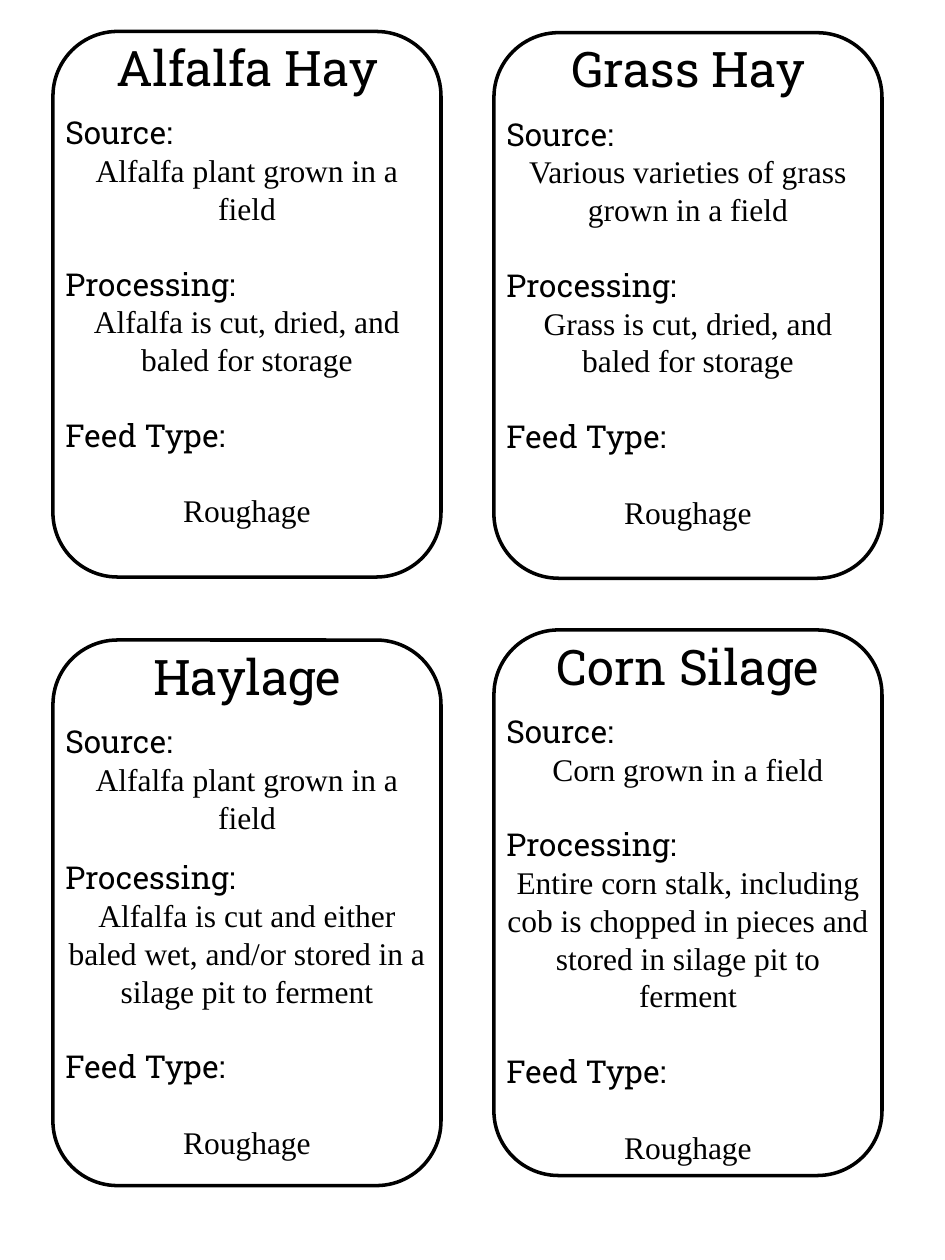
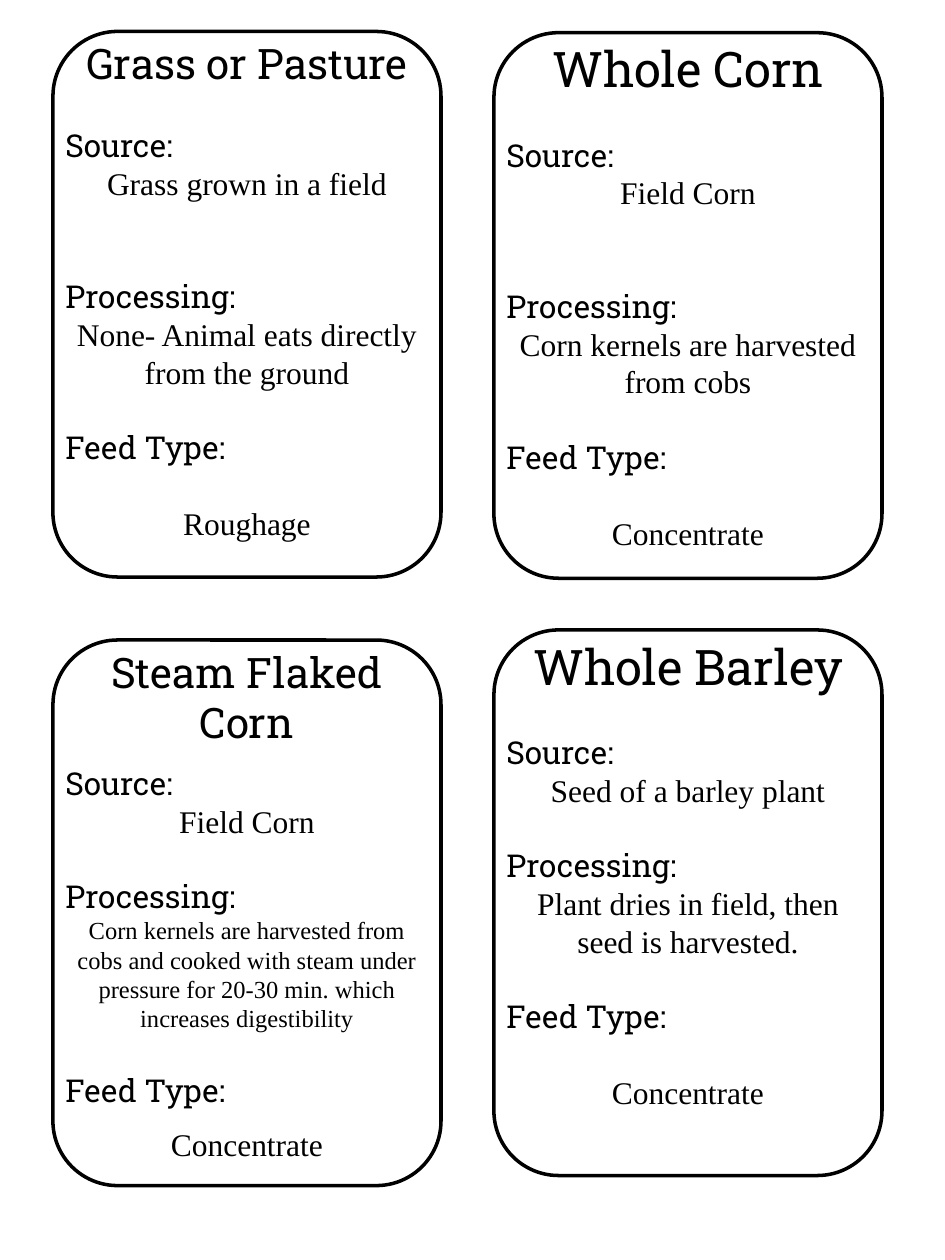
from dataclasses import dataclass

from pptx import Presentation
from pptx.dml.color import RGBColor
from pptx.enum.shapes import MSO_SHAPE
from pptx.enum.text import MSO_AUTO_SIZE, PP_ALIGN
from pptx.util import Inches, Pt

ROUNDED = MSO_SHAPE.ROUNDED_RECTANGLE
GROW = MSO_AUTO_SIZE.SHAPE_TO_FIT_TEXT
LEFT, CENTER = PP_ALIGN.LEFT, PP_ALIGN.CENTER

COLORS = {"ink": "000000"}
HEADING_FONT, ANSWER_FONT = "Roboto Slab", "Times New Roman"
BODY_SIZE = 18
LINE_HEIGHT = 1.2

SLIDE_WIDTH, SLIDE_HEIGHT = 7.5, 10
CARD_WIDTH, CARD_HEIGHT = 3.08, 4.33
COLUMN_LEFT, COLUMN_STEP = 0.42, 3.5
CARD_TOPS = (0.25, 0.26, 5.08, 5)


@dataclass
class Feed:
    name: str
    source: str
    processing: str
    feed_type: str
    text_height: float = 4.51
    name_size: int = 28
    processing_size: int = BODY_SIZE
    source_gap: int = 8
    processing_gap: int = 18
    type_gap: int = 18


FEED_SHEETS = (
    (
        Feed("Alfalfa Hay", "Alfalfa plant grown in a field",
             "Alfalfa is cut, dried, and baled for storage", "Roughage"),
        Feed("Grass Hay", "Various varieties of grass grown in a field",
             "Grass is cut, dried, and baled for storage", "Roughage"),
        Feed("Haylage", "Alfalfa plant grown in a field",
             "Alfalfa is cut and either baled wet, and/or stored in a silage pit to ferment",
             "Roughage", text_height=4.61, processing_gap=11),
        Feed("Corn Silage", "Corn grown in a field",
             "Entire corn stalk, including cob is chopped in pieces and stored in silage pit to ferment",
             "Roughage", text_height=4.81),
    ),
    (
        Feed("Grass or Pasture", "Grass grown in a field",
             "None- Animal eats directly from the ground", "Roughage",
             text_height=4.44, name_size=24, source_gap=18, processing_gap=36),
        Feed("Whole Corn", "Field Corn", "Corn kernels are harvested from cobs",
             "Concentrate", source_gap=18, processing_gap=36),
        Feed("Steam Flaked Corn", "Field Corn",
             "Corn kernels are harvested from cobs and cooked with steam under pressure "
             "for 20-30 min. which increases digestibility",
             "Concentrate", text_height=4.71, name_size=24, processing_size=14, type_gap=8),
        Feed("Whole Barley", "Seed of a barley plant",
             "Plant dries in field, then seed is harvested.", "Concentrate",
             text_height=4.21, source_gap=18),
    ),
)


def ink():
    return RGBColor.from_string(COLORS["ink"])


def add_outline(slide, left, top):
    outline = slide.shapes.add_shape(
        ROUNDED, Inches(left), Inches(top), Inches(CARD_WIDTH), Inches(CARD_HEIGHT))
    outline.shadow.inherit = False
    outline.fill.background()
    outline.line.color.rgb = ink()
    outline.line.width = Pt(2)


def write_line(paragraph, text, font_name, size=BODY_SIZE, align=CENTER, gap=0):
    paragraph.text = text
    paragraph.alignment = align
    paragraph.space_before = Pt(round(gap * LINE_HEIGHT, 1))
    font = paragraph.runs[0].font
    font.name, font.size = font_name, Pt(size)
    font.color.rgb = ink()


def add_feed_text(slide, feed, left, top):
    frame = slide.shapes.add_textbox(
        Inches(left), Inches(top), Inches(CARD_WIDTH), Inches(feed.text_height)).text_frame
    frame.word_wrap = True
    frame.auto_size = GROW
    write_line(frame.paragraphs[0], feed.name, HEADING_FONT, feed.name_size)
    sections = (
        ("Source:", feed.source, BODY_SIZE, feed.source_gap, 0),
        ("Processing:", feed.processing, feed.processing_size, feed.processing_gap, 0),
        ("Feed Type:", feed.feed_type, BODY_SIZE, 18, feed.type_gap),
    )
    for label, answer, size, label_gap, answer_gap in sections:
        write_line(frame.add_paragraph(), label, HEADING_FONT, align=LEFT, gap=label_gap)
        write_line(frame.add_paragraph(), answer, ANSWER_FONT, size, gap=answer_gap)


def add_sheet(deck, feeds):
    slide = deck.slides.add_slide(deck.slide_layouts[6])
    for index, (feed, top) in enumerate(zip(feeds, CARD_TOPS)):
        left = COLUMN_LEFT + index % 2 * COLUMN_STEP
        add_outline(slide, left, top)
        add_feed_text(slide, feed, left, top)


def main():
    deck = Presentation()
    deck.slide_width, deck.slide_height = Inches(SLIDE_WIDTH), Inches(SLIDE_HEIGHT)
    for feeds in FEED_SHEETS:
        add_sheet(deck, feeds)
    deck.save("out.pptx")


if __name__ == "__main__":
    main()
